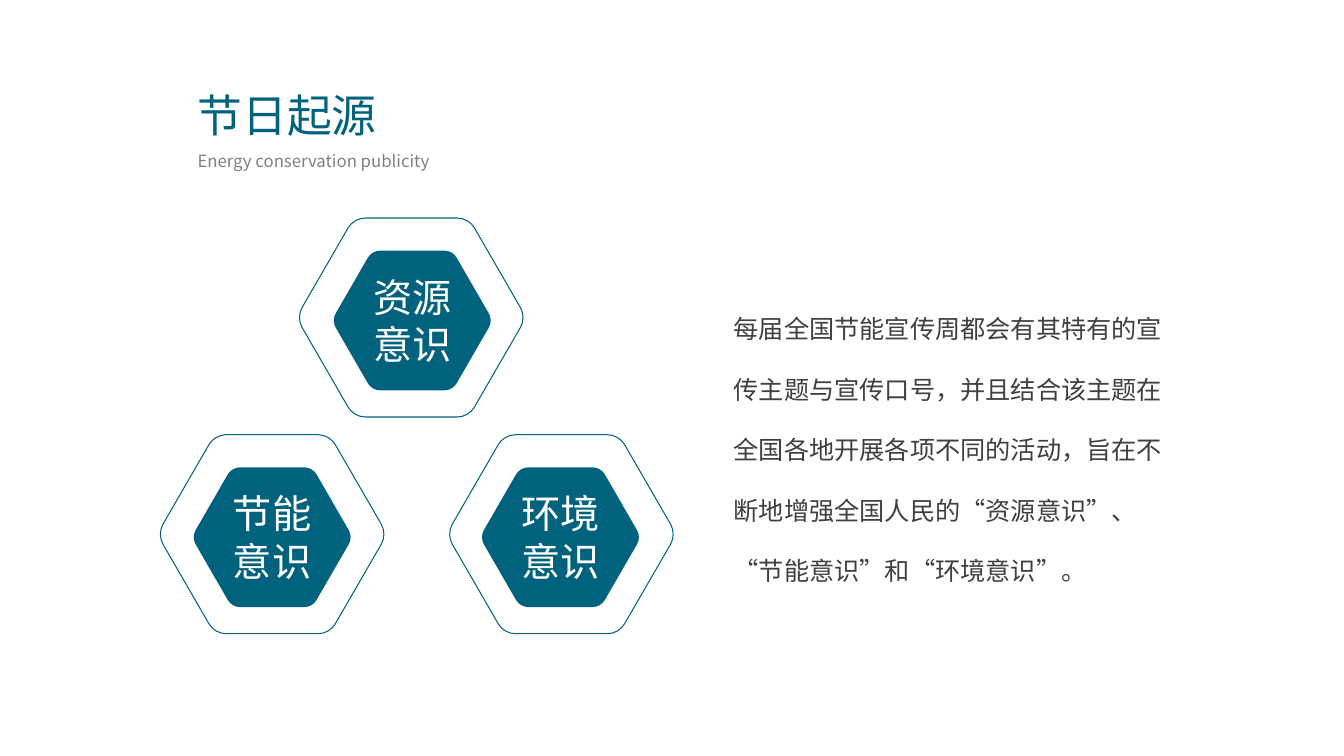
"""Build the slide on the festival's origin with three rounded hexagons."""
from math import cos, pi, sin

from lxml.etree import SubElement
from pptx import Presentation
from pptx.dml.color import RGBColor
from pptx.enum.text import MSO_ANCHOR, MSO_AUTO_SIZE, PP_ALIGN
from pptx.oxml.ns import qn
from pptx.util import Emu, Pt

PX = 9144
FONT = "Noto Sans CJK SC"
COLORS = {"teal": "00627D", "white": "FFFFFF", "dark": "404040", "gray": "808080"}
HEXES = [("资源意识", (408, 315), (409, 318)),
         ("节能意识", (270, 530), (270, 533)),
         ("环境意识", (557, 530), (556, 533))]
BODY = ("每届全国节能宣传周都会有其特有的宣传主题与宣传口号，并且结合该主题在"
        "全国各地开展各项不同的活动，旨在不断地增强全国人民的“资源意识”、"
        "“节能意识”和“环境意识”。")


def px(num):
    return Emu(round(num * PX))


def color(name):
    return RGBColor.from_string(COLORS[name])


def write(shape, text, size, ink, align=PP_ALIGN.LEFT, space=1.0):
    frame = shape.text_frame
    frame.auto_size = MSO_AUTO_SIZE.SHAPE_TO_FIT_TEXT
    para = frame.paragraphs[0]
    para.text = text
    para.alignment = align
    para.line_spacing = space
    para.font.name = FONT
    para.font.size = Pt(size)
    para.font.color.rgb = color(ink)
    return frame


def add_text(slide, box, *style, wrap=True, **extra):
    shape = slide.shapes.add_textbox(*map(px, box))
    frame = write(shape, *style, **extra)
    frame.word_wrap = wrap
    return frame


def add_title(slide, box, text):
    title = slide.shapes.title
    title.left, title.top, title.width, title.height = map(px, box)
    frame = write(title, text, 32, "teal")
    frame.vertical_anchor = MSO_ANCHOR.MIDDLE
    frame.margin_left = frame.margin_right = 0
    frame.margin_top = frame.margin_bottom = 0


def outline(x, y, radius):
    """Return each corner's entry, two curve handles and exit."""
    peaks = [(x + radius * cos(k * pi / 3), y + radius * sin(k * pi / 3))
             for k in range(6)]
    points = []
    for k, peak in enumerate(peaks):
        prev, after = peaks[k - 1], peaks[(k + 1) % 6]
        for side, part in ((prev, 0.1), (prev, 0.04), (after, 0.04), (after, 0.1)):
            points.append(tuple(px(c + part * (s - c)) for c, s in zip(peak, side)))
    return points


def curve(shape):
    """Join each corner's three segments into one Bezier curve."""
    lines = list(shape._element.iter(qn("a:lnTo")))
    for k in range(0, len(lines), 4):
        bend = SubElement(lines[k].getparent(), qn("a:cubicBezTo"))
        lines[k].addprevious(bend)
        for line in lines[k:k + 3]:
            bend.append(line[0])
            line.getparent().remove(line)


def add_hex(slide, spot, radius, solid):
    first, *rest = outline(*spot, radius)
    path = slide.shapes.build_freeform(*first)
    path.add_line_segments(rest, close=True)
    shape = path.convert_to_shape()
    curve(shape)
    shape.shadow.inherit = False
    if solid:
        shape.fill.solid()
        shape.fill.fore_color.rgb = color("teal")
        shape.line.fill.background()
    else:
        shape.fill.background()
        shape.line.color.rgb = color("teal")
        shape.line.width = Pt(0.75)


def add_badge(slide, text, ring, core):
    add_hex(slide, ring, 114, False)
    add_hex(slide, core, 80, True)
    x, y = core
    add_text(slide, (x - 60, y - 52, 120, 104), text, 28, "white",
             align=PP_ALIGN.CENTER)


def main():
    deck = Presentation()
    deck.slide_width, deck.slide_height = px(4000 / 3), px(750)
    slide = deck.slides.add_slide(deck.slide_layouts[5])
    add_title(slide, (196, 87, 591, 54), "节日起源")
    label = add_text(slide, (196, 135, 276, 68), "Energy conservation publicity",
                     12, "gray", wrap=False, space=1.5)
    label.margin_left = 0
    for text, ring, core in HEXES:
        add_badge(slide, text, ring, core)
    add_text(slide, (718, 276, 467, 305), BODY, 18, "dark", space=2.0)
    deck.save("out.pptx")


if __name__ == "__main__":
    main()
